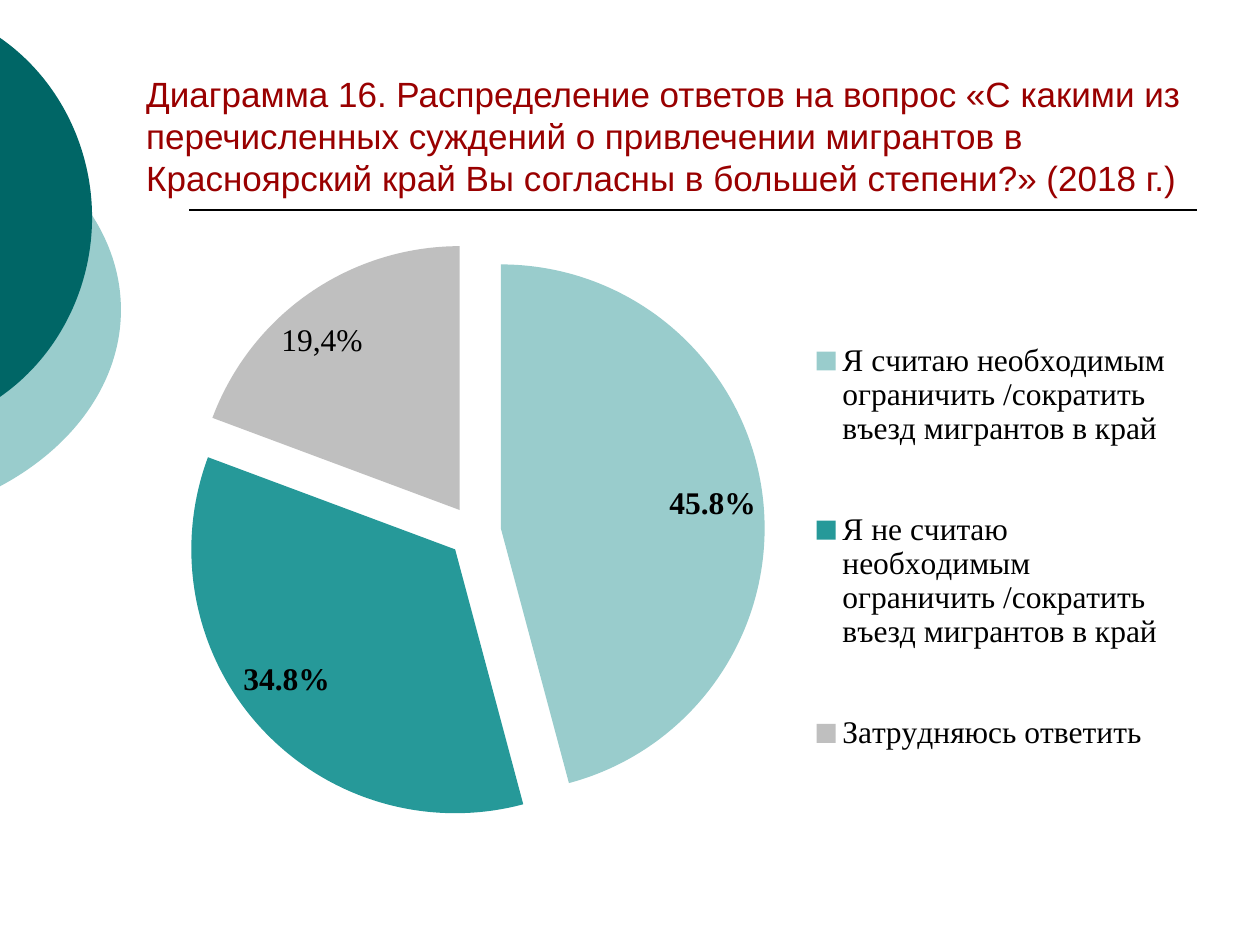
from lxml import etree
from pptx import Presentation
from pptx.chart.data import CategoryChartData
from pptx.dml.color import RGBColor
from pptx.enum.chart import XL_CHART_TYPE, XL_LABEL_POSITION, XL_LEGEND_POSITION
from pptx.enum.shapes import MSO_CONNECTOR
from pptx.enum.text import MSO_ANCHOR, MSO_AUTO_SIZE, PP_ALIGN
from pptx.oxml.ns import qn
from pptx.util import Pt

PIE = XL_CHART_TYPE.PIE
INSIDE_END = XL_LABEL_POSITION.INSIDE_END
LEGEND_RIGHT = XL_LEGEND_POSITION.RIGHT
STRAIGHT = MSO_CONNECTOR.STRAIGHT
BOTTOM = MSO_ANCHOR.BOTTOM
NO_AUTOFIT = MSO_AUTO_SIZE.NONE
LEFT = PP_ALIGN.LEFT

COLORS = {
    "text": "000000",
    "title": "990000",
    "dark_teal": "006666",
    "light_teal": "99CCCC",
    "teal": "269999",
    "gray": "BFBFBF",
}
TITLE_FONT, CHART_FONT = "Arial", "Times New Roman"
TITLE_ONLY = 5
CHART_WIDTH, CHART_HEIGHT = 607, 351.4


def color(name):
    return RGBColor.from_string(COLORS[name])


def set_layout(element, predecessor, x, y, size=None, inner=False):
    """Place a chart part by points; without a size, x and y are offsets."""
    for old in element.findall(qn("c:layout")):
        element.remove(old)
    layout = etree.Element(qn("c:layout"))
    if predecessor is None:
        element.insert(0, layout)
    else:
        element.find(qn(predecessor)).addnext(layout)
    manual = etree.SubElement(layout, qn("c:manualLayout"))
    settings = [("layoutTarget", "inner")] if inner else []
    if size:
        settings += [("xMode", "edge"), ("yMode", "edge")]
    settings += [("x", x / CHART_WIDTH), ("y", y / CHART_HEIGHT)]
    if size:
        settings += [("w", size[0] / CHART_WIDTH), ("h", size[1] / CHART_HEIGHT)]
    for tag, value in settings:
        etree.SubElement(manual, qn(f"c:{tag}")).set("val", str(value))


class SlideBuilder:
    def __init__(self, slide):
        self.slide = slide

    def style(self, font, face, size, color_name, bold=False):
        font.name = face
        font.size = Pt(size)
        font.bold = bold
        font.color.rgb = color(color_name)

    def edge_disc(self, box, top, shoulder, belly, fill):
        """Disc cut off by the left slide edge: two mirrored curves in a box."""
        left, box_top, width, height = box
        right, bottom = left + width, box_top + height
        builder = self.slide.shapes.build_freeform(Pt(left), Pt(box_top))
        builder.add_line_segments(
            [(Pt(x), Pt(y)) for x, y in ((right, box_top), (right, bottom), (left, bottom))])
        disc = builder.convert_to_shape()
        disc.shadow.inherit = False
        disc.fill.solid()
        disc.fill.fore_color.rgb = color(fill)
        disc.line.fill.background()

        # Upper curve, then its mirror image
        middle = belly[1][1]
        upper = [shoulder, *belly]
        lower = [(x, 2 * middle - y) for x, y in (belly[0], shoulder, (0, top))]
        outline = disc._element.spPr.find(f".//{qn('a:pathLst')}")[0]
        for child in list(outline):
            outline.remove(child)
        steps = (("moveTo", [(0, top)]), ("cubicBezTo", upper),
                 ("cubicBezTo", lower), ("close", []))
        for tag, points in steps:
            step = etree.SubElement(outline, qn(f"a:{tag}"))
            for x, y in points:
                point = etree.SubElement(step, qn("a:pt"))
                point.set("x", str(Pt(x - left)))
                point.set("y", str(Pt(y - box_top)))

    def rule(self, left, right, y):
        line = self.slide.shapes.add_connector(STRAIGHT, Pt(left), Pt(y), Pt(right), Pt(y))
        line.line.color.rgb = color("text")
        line.line.width = Pt(1)
        etree.SubElement(line._element.spPr, qn("a:effectLst"))

    def title(self, text, left, top, width, height):
        title = self.slide.shapes.title
        title.left, title.top = Pt(left), Pt(top)
        title.width, title.height = Pt(width), Pt(height)
        frame = title.text_frame
        frame.text = text
        frame.word_wrap = True
        frame.auto_size = NO_AUTOFIT
        frame.vertical_anchor = BOTTOM
        paragraph = frame.paragraphs[0]
        paragraph.alignment = LEFT
        self.style(paragraph.runs[0].font, TITLE_FONT, 20, "title")

    def pie(self, answers, left, top):
        data = CategoryChartData(number_format="0.0%")
        data.categories = [answer for answer, *_ in answers]
        data.add_series("Series 1", [share for _, share, *_ in answers])
        chart = self.slide.shapes.add_chart(
            PIE, Pt(left), Pt(top), Pt(CHART_WIDTH), Pt(CHART_HEIGHT), data).chart
        chart.has_title = False
        self.style(chart.font, CHART_FONT, 12, "text")

        # Legend
        chart.has_legend = True
        chart.legend.position = LEGEND_RIGHT
        chart.legend.include_in_layout = False
        self.style(chart.legend.font, CHART_FONT, 18, "text")
        set_layout(chart.legend._element, "c:legendPos", 385.5, 30.2, (209, 308.6))

        # Value labels
        plot = chart.plots[0]
        plot.vary_by_categories = True
        series = plot.series[0]
        labels = series.data_labels
        labels.show_value = True
        labels.number_format = "0.0%"
        labels.number_format_is_linked = False
        labels.position = INSIDE_END
        self.style(labels.font, CHART_FONT, 18, "text", bold=True)

        # Slices, each with its label nudged
        for index, (_, _, fill, nudge, wording) in enumerate(answers):
            point = series.points[index]
            point.format.fill.solid()
            point.format.fill.fore_color.rgb = color(fill)
            label = point.data_label
            if wording:
                label.text_frame.text = wording
                run = label.text_frame.paragraphs[0].runs[0]
                self.style(run.font, CHART_FONT, 18, "text")
            else:
                self.style(label.font, CHART_FONT, 18, "text", bold=True)
            label.position = INSIDE_END
            set_layout(label._dLbl, "c:idx", *nudge)
        explosion = etree.Element(qn("c:explosion"))
        explosion.set("val", "10")
        series._element.find(qn("c:dPt")).addprevious(explosion)
        set_layout(chart._chartSpace.chart.plotArea, None, 29.1, 9.8,
                   (331.7, 331.7), inner=True)


def main():
    presentation = Presentation()
    presentation.slide_width, presentation.slide_height = Pt(720), Pt(540)
    slide = presentation.slides.add_slide(presentation.slide_layouts[TITLE_ONLY])
    builder = SlideBuilder(slide)

    # Background decoration
    builder.edge_disc((-254.9, 54, 324, 246.2), 76.3, (43.2, 99.4),
                      [(69.1, 136.8), (69.1, 177.1)], "light_teal")
    builder.edge_disc((-190.8, 0, 243.4, 248.4), 21.6, (33.1, 44.6),
                      [(52.6, 83.5), (52.6, 124.2)], "dark_teal")
    builder.rule(108, 684, 120.2)

    # Title
    builder.title(
        "Диаграмма 16. Распределение ответов на вопрос «С какими из перечисленных "
        "суждений о привлечении мигрантов в Красноярский край Вы согласны в большей "
        "степени?» (2018 г.)",
        76.3, 24.3, 623.5, 92.9)

    # Survey answers: wording, share, fill, label offset, label wording
    builder.pie(
        [
            ("Я считаю необходимым ограничить /сократить въезд мигрантов в край",
             0.458, "light_teal", (0.6, -4.6), None),
            ("Я не считаю необходимым ограничить /сократить въезд мигрантов в край",
             0.348, "teal", (-12.6, -14.3), None),
            ("Затрудняюсь ответить", 0.193, "gray", (-18.3, 14.3), "19,4%"),
        ],
        76.3, 128.2)

    presentation.save("out.pptx")


if __name__ == "__main__":
    main()
